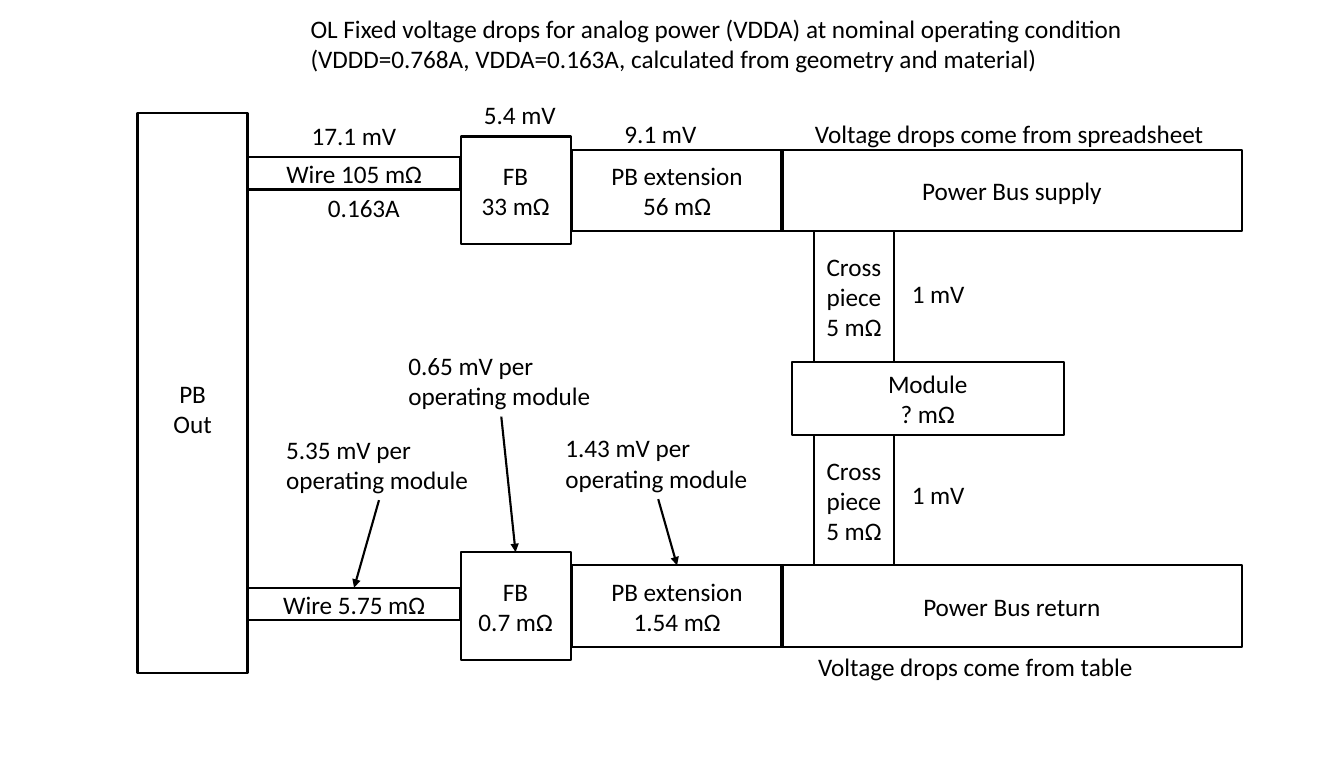
import pptx
import pptx.dml.color
import pptx.enum.shapes
import pptx.enum.text
import pptx.oxml
import pptx.oxml.ns
import pptx.util
from pptx.util import Inches

COLORS = {"ink": "000000"}
FONT = "Calibri"
TEXT_SIZE = pptx.util.Pt(17.8)
LINE_WIDTH = pptx.util.Pt(1.5)


def ink():
    return pptx.dml.color.RGBColor.from_string(COLORS["ink"])


def write_text(shape, text, alignment):
    shape.text_frame.text = text
    for paragraph in shape.text_frame.paragraphs:
        paragraph.alignment = alignment
        for span in paragraph.runs:
            span.font.name = FONT
            span.font.size = TEXT_SIZE
            span.font.color.rgb = ink()


def add_block(page, left, top, width, height, text):
    """Outlined rectangle with centred text."""
    block = page.shapes.add_shape(
        pptx.enum.shapes.MSO_SHAPE.RECTANGLE,
        Inches(left), Inches(top), Inches(width), Inches(height))
    block.shadow.inherit = False
    block.fill.background()
    block.line.color.rgb = ink()
    block.line.width = LINE_WIDTH
    block.text_frame.word_wrap = True
    block.text_frame.vertical_anchor = pptx.enum.text.MSO_ANCHOR.MIDDLE
    write_text(block, text, pptx.enum.text.PP_ALIGN.CENTER)
    return block


def add_label(page, left, top, width, text, wrap=False):
    """Plain text whose height follows its number of lines."""
    height = 0.1 + 0.3 * len(text.split("\n"))
    label = page.shapes.add_textbox(
        Inches(left), Inches(top), Inches(width), Inches(height))
    label.text_frame.word_wrap = wrap
    label.text_frame.auto_size = pptx.enum.text.MSO_AUTO_SIZE.SHAPE_TO_FIT_TEXT
    write_text(label, text, pptx.enum.text.PP_ALIGN.LEFT)
    return label


def add_arrow(page, label, block):
    """Arrow from the bottom of a label to the top of a block."""
    arrow = page.shapes.add_connector(
        pptx.enum.shapes.MSO_CONNECTOR.STRAIGHT, 0, 0, 0, 0)
    arrow.begin_connect(label, 2)
    arrow.end_connect(block, 0)
    arrow.line.color.rgb = ink()
    arrow.line.width = LINE_WIDTH
    head = pptx.oxml.parse_xml(
        '<a:tailEnd %s type="triangle"/>' % pptx.oxml.ns.nsdecls("a"))
    arrow.line._get_or_add_ln().append(head)
    effects = pptx.oxml.parse_xml("<a:effectLst %s/>" % pptx.oxml.ns.nsdecls("a"))
    arrow._element.spPr.append(effects)


def add_rail(page, top, wire_top, wire, bead, extension, bus):
    """One current path: wire, FB, PB extension and power bus."""
    add_block(page, 7.67, top, 4.52, 0.8, bus)
    return (
        add_block(page, 2.43, wire_top, 2.09, 0.32, wire),
        add_block(page, 4.52, top - 0.13, 1.08, 1.06, bead),
        add_block(page, 5.61, top, 2.07, 0.8, extension))


def main():
    deck = pptx.Presentation()
    deck.slide_width, deck.slide_height = Inches(13.19), Inches(7.5)
    page = deck.slides.add_slide(deck.slide_layouts[6])

    # Title
    add_label(page, 2.95, 0.08, 8.66,
              "OL Fixed voltage drops for analog power (VDDA) at nominal operating condition\n"
              "(VDDD=0.768A, VDDA=0.163A, calculated from geometry and material)", wrap=True)

    # Source, with its text one half line below the middle
    source = add_block(page, 1.35, 1.11, 1.08, 5.5, "PB\nOut")
    source.text_frame.margin_top = Inches(0.35)

    # Supply and return rails
    add_rail(page, 1.47, 1.54, "Wire 105 mΩ", "FB\n33 mΩ",
             "PB extension\n56 mΩ", "Power Bus supply")
    return_blocks = add_rail(page, 5.55, 5.77, "Wire 5.75 mΩ", "FB\n0.7 mΩ",
                             "PB extension\n1.54 mΩ", "Power Bus return")

    # Module between two cross pieces
    add_block(page, 7.77, 3.55, 2.67, 0.72, "Module\n? mΩ")
    for top, label_top in ((2.27, 2.68), (4.27, 4.66)):
        add_block(page, 7.99, top, 0.78, 1.28, "Cross piece\n5 mΩ")
        add_label(page, 8.85, label_top, 0.73, "1 mV")

    # Values and remarks beside the rails
    for left, top, width, text in (
            (2.96, 1.13, 1.04, "17.1 mV"),
            (3.12, 1.84, 0.91, "0.163A"),
            (4.65, 0.93, 0.91, "5.4 mV"),
            (6.03, 1.11, 0.91, "9.1 mV"),
            (7.9, 1.11, 4.06, "Voltage drops come from spreadsheet"),
            (7.93, 6.34, 3.33, "Voltage drops come from table")):
        add_label(page, left, top, width, text)

    # Drops per module, pointing at the return rail
    drops = ((2.71, 4.21, "5.35"), (3.91, 3.39, "0.65"), (5.45, 4.2, "1.43"))
    for (left, top, value), block in zip(drops, return_blocks):
        label = add_label(page, left, top, 2.02, value + " mV per\noperating module")
        add_arrow(page, label, block)

    deck.save("out.pptx")


if __name__ == "__main__":
    main()
